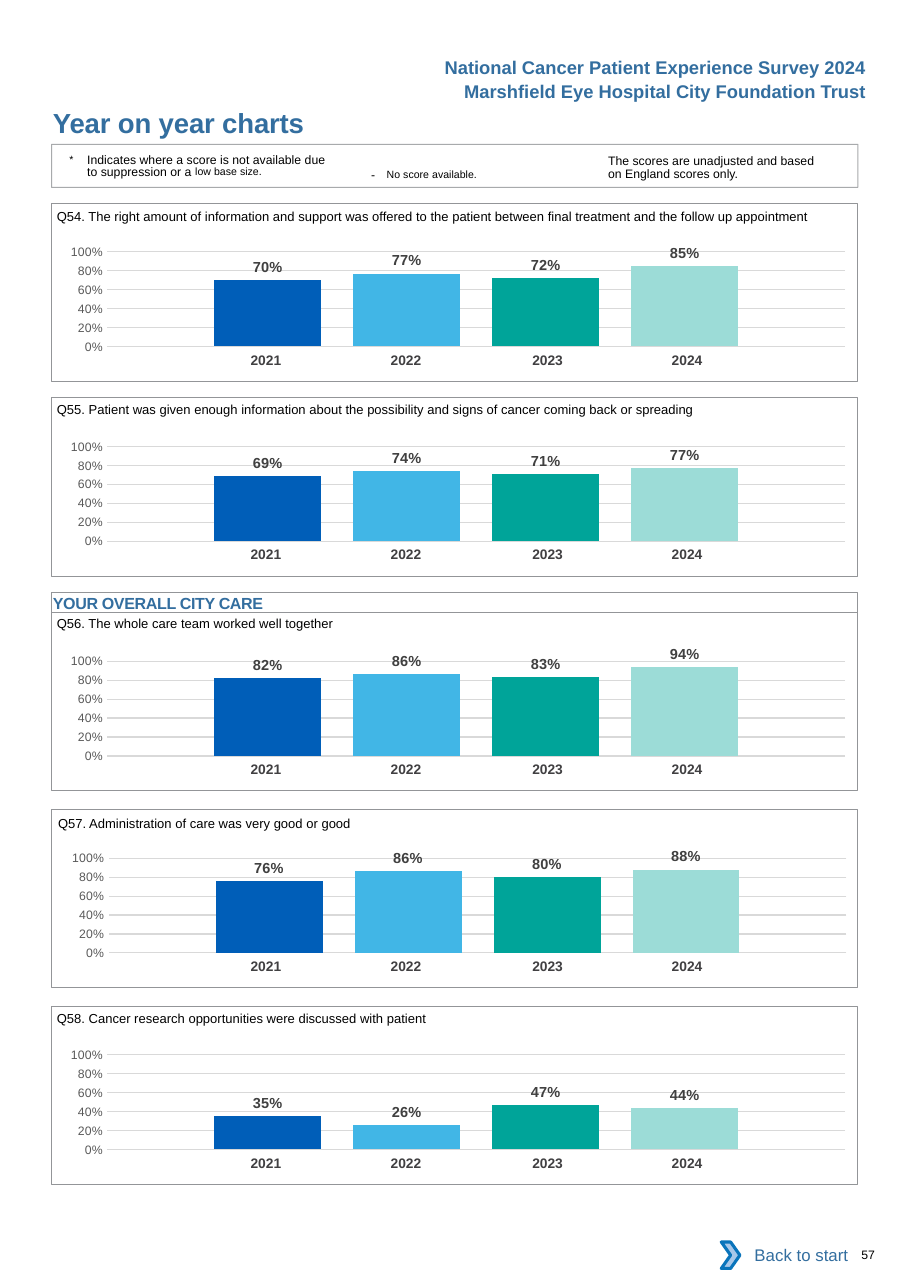
from pptx import Presentation
from pptx.chart.data import CategoryChartData
from pptx.dml.color import RGBColor
from pptx.enum.chart import XL_CHART_TYPE, XL_LABEL_POSITION, XL_TICK_MARK
from pptx.enum.shapes import MSO_SHAPE
from pptx.enum.text import MSO_ANCHOR, PP_ALIGN
from pptx.oxml import parse_xml
from pptx.oxml.ns import nsdecls, qn
from pptx.util import Cm, Pt
from lxml.etree import SubElement

COLUMN = XL_CHART_TYPE.COLUMN_CLUSTERED
OUTER = XL_LABEL_POSITION.OUTSIDE_END
NO_TICK = XL_TICK_MARK.NONE
RECT, CHEVRON = MSO_SHAPE.RECTANGLE, MSO_SHAPE.CHEVRON
TOP, MIDDLE = MSO_ANCHOR.TOP, MSO_ANCHOR.MIDDLE
LEFT, CENTER, RIGHT = PP_ALIGN.LEFT, PP_ALIGN.CENTER, PP_ALIGN.RIGHT

BLUE, GREY, BLACK = "336E9F", "939598", "000000"
BARS = ["005EB8", "41B6E6", "00A499", "9CDCD7"]
YEARS = ["2021", "2022", "2023", "2024"]
NO_STYLE = "{2D5ABB26-0587-4C30-8999-92F81FD0307C}"
SIDE, WIDTH, HEIGHT = 1.19, 18.59, 4.11

# Panel top, lift of the question, shift to the right, question, scores
PANELS = [
    (4.68, 0.1, 0, "Q54. The right amount of information and support was offered to the "
     "patient between final treatment and the follow up appointment", [0.70, 0.77, 0.72, 0.85]),
    (9.17, 0.15, 0, "Q55. Patient was given enough information about the possibility and "
     "signs of cancer coming back or spreading", [0.69, 0.74, 0.71, 0.77]),
    (14.12, 0.17, 0, "Q56. The whole care team worked well together",
     [0.82, 0.86, 0.83, 0.94]),
    (18.66, 0.1, 0.03, "Q57. Administration of care was very good or good",
     [0.76, 0.86, 0.80, 0.88]),
    (23.19, 0.13, 0, "Q58. Cancer research opportunities were discussed with patient",
     [0.35, 0.26, 0.47, 0.44]),
]


def paint(color, value):
    color.rgb = RGBColor.from_string(value)


def style(font, size, color=BLACK, bold=False):
    for key, value in {"name": "Arial", "size": Pt(size), "bold": bold}.items():
        setattr(font, key, value)
    paint(font.color, color)


def write(frame, runs, color=BLACK, bold=False, align=LEFT, inset=(0, 0, 0, 0),
          wrap=True, anchor=TOP, lead=None):
    """Fill a frame with runs of (text, size, extra XML attributes)."""
    edges = zip(("left", "top", "right", "bottom"), inset)
    form = {f"margin_{side}": Cm(gap) for side, gap in edges}
    form.update(word_wrap=wrap, vertical_anchor=anchor)
    for key, value in form.items():
        setattr(frame, key, value)
    para = frame.paragraphs[0]
    para.alignment = align
    if lead:
        para.line_spacing = Pt(lead)
    for text, size, extra in runs:
        run = para.add_run()
        run.text = text
        style(run.font, size, color, bold)
        for key, value in extra.items():
            run._r.get_or_add_rPr().set(key, value)
    return para


def label(slide, box, runs, **form):
    frame = slide.shapes.add_textbox(*map(Cm, box)).text_frame
    return write(frame, runs, **form)


def outline(slide, box, kind=RECT, fill=None, line=GREY, width=0.5):
    shape = slide.shapes.add_shape(kind, *map(Cm, box))
    shape.shadow.inherit = False
    if fill:
        shape.fill.solid()
        paint(shape.fill.fore_color, fill)
    else:
        shape.fill.background()
    if line:
        paint(shape.line.color, line)
        shape.line.width = Pt(width)
    else:
        shape.line.fill.background()
    return shape


def header(slide):
    pad = (0.25, 0.13, 0.25, 0.13)
    lines = ["National Cancer Patient Experience Survey 2024",
             "Marshfield Eye Hospital City Foundation Trust"]
    for row, text in enumerate(lines):
        label(slide, (9.96, 1.16 + row * 0.56, 10.26, 0.76), [(text, 12, {})],
              color=BLUE, bold=True, align=RIGHT, inset=pad, wrap=False)
    title = slide.shapes.title
    places = zip(("left", "top", "width", "height"), (SIDE, 2.44, 11.43, 0.76))
    for key, value in places:
        setattr(title, key, Cm(value))
    write(title.text_frame, [("Year on year charts", 18, {"spc": "-10"})], color=BLUE,
          bold=True, inset=(0.03, 0, 0, 0))


def legend(slide, x, y):
    frame = outline(slide, (x, y, WIDTH, 0.99), width=0.75)
    tint = frame.line._ln.find(".//" + qn("a:srgbClr"))
    SubElement(tint, qn("a:alpha")).set("val", "80000")
    star = label(slide, (x + 0.41, y + 0.18, 6.1, 0.7), [
        ("*\t", 12, {"baseline": "3000"}),
        ("Indicates where a score is not available due to suppression or a ", 8, {}),
        ("low base size.", 12, {"baseline": "7000"})],
        inset=(0, 0.08, 0, 0), lead=8.1)
    for key, value in {"marL": 0.41, "indent": -0.41}.items():
        star._p.get_or_add_pPr().set(key, str(Cm(value)))
    label(slide, (x + 7.12, y + 0.25, 4.65, 0.61), [
        ("- ", 8, {"spc": "260"}), ("No score available.", 12, {"baseline": "3000"})],
        inset=(0.25, 0.13, 0.25, 0.13))
    label(slide, (x + 12.83, y + 0.18, 5.1, 0.69),
          [("The scores are unadjusted and based on England scores only.", 8, {})],
          inset=(0, 0.08, 0, 0), lead=8.1)


def graph(slide, box, scores):
    data = CategoryChartData(number_format="0%")
    data.categories = ["1"]
    for place, score in enumerate(scores, 1):
        data.add_series(f"Series {place}", [score])
    chart = slide.shapes.add_chart(COLUMN, *map(Cm, box), data).chart
    chart.has_legend = chart.has_title = False
    chart.font.name, chart.font.size = "Calibri", Pt(10)
    chart.category_axis.visible = False
    axis = chart.value_axis
    form = {"minimum_scale": 0, "maximum_scale": 1, "major_unit": 0.2,
            "major_tick_mark": NO_TICK, "minor_tick_mark": NO_TICK}
    for key, value in form.items():
        setattr(axis, key, value)
    style(axis.tick_labels.font, 8, "595959")
    axis.tick_labels.number_format = "0%"
    axis.tick_labels.number_format_is_linked = False
    axis.format.line.fill.background()
    grid = axis.major_gridlines.format.line
    paint(grid.color, "D9D9D9")
    grid.width = Pt(0.75)
    plot = chart.plots[0]
    plot.gap_width, plot.overlap, plot.vary_by_categories = 200, -30, False
    for series, color in zip(plot.series, BARS):
        series.format.fill.solid()
        paint(series.format.fill.fore_color, color)
        marks = series.data_labels
        form = {"show_value": True, "position": OUTER, "number_format": "0%",
                "number_format_is_linked": False}
        for key, value in form.items():
            setattr(marks, key, value)
        style(marks.font, 9.5, "404040", True)
    area = chart._chartSpace.chart.plotArea
    for old in area.findall(qn("c:layout")):
        area.remove(old)
    parts = {"layoutTarget": "inner", "xMode": "edge", "yMode": "edge",
             "x": 0.08, "y": 0.145, "w": 0.915, "h": 0.666}
    inner = "".join(f'<c:{key} val="{value}"/>' for key, value in parts.items())
    area.insert(0, parse_xml(f'<c:layout {nsdecls("c")}><c:manualLayout>{inner}'
                             '</c:manualLayout></c:layout>'))


def years(slide, x, y):
    widths, pads = [3.23, 3.23, 3.4, 3.23], [0, 0, 0.1, 0.3]
    table = slide.shapes.add_table(1, 4, Cm(x), Cm(y), Cm(sum(widths)), Cm(0.69)).table
    table.first_row = table.horz_banding = False
    table._tbl.tblPr[0].text = NO_STYLE
    for col, (year, width, pad) in enumerate(zip(YEARS, widths, pads)):
        table.columns[col].width = Cm(width)
        cell = table.cell(0, col)
        cell.fill.background()
        write(cell.text_frame, [(year, 9, {})], color="414042", bold=True, align=CENTER)
        edges = {"left": 0.25, "top": 0.13, "right": pad, "bottom": 0.13}
        for side, gap in edges.items():
            setattr(cell, f"margin_{side}", Cm(gap))


def panel(slide, x, y, lift, shift, text, scores):
    label(slide, (x + 0.12 + shift, y - lift, 18.4, 0.61), [(text, 8.5, {})],
          inset=(0, 0.23, 0, 0))
    graph(slide, (x - 0.2 + shift, y + 0.65, WIDTH, 3.28), scores)
    years(slide, x + 3.2, y + 3.32)
    outline(slide, (x, y, WIDTH, HEIGHT))


def section(slide, x, y):
    frame = outline(slide, (x, y, WIDTH, 0.46)).text_frame
    write(frame, [("YOUR OVERALL CITY CARE", 10.5, {"spc": "-20"})], color=BLUE,
          bold=True, inset=(0.03, 0.03, 0, 0))


def footer(slide, x, y):
    back = outline(slide, (x, y, 3, 1.07), fill="FFFFFF", line=None)
    write(back.text_frame, [("Back to start", 11, {})], color=BLUE, align=RIGHT,
          inset=(0.25, 0.13, 0.25, 0.13), anchor=MIDDLE)
    outline(slide, (x - 0.18, y + 0.23, 0.43, 0.61), CHEVRON, "A8C7E9", "0A74BB", 2)
    label(slide, (x + 2.8, y + 0.36, 1.3, 0.33), [("57", 8, {})], inset=(0.25, 0, 0, 0))


def main():
    deck = Presentation()
    deck.slide_width, deck.slide_height = Cm(20.98), Cm(29.69)
    slide = deck.slides.add_slide(deck.slide_layouts[5])
    header(slide)
    legend(slide, SIDE, 3.33)
    for top, *parts in PANELS:
        panel(slide, SIDE, top, *parts)
    section(slide, SIDE, 13.66)
    footer(slide, 16.81, 28.4)
    deck.save("out.pptx")


if __name__ == "__main__":
    main()
